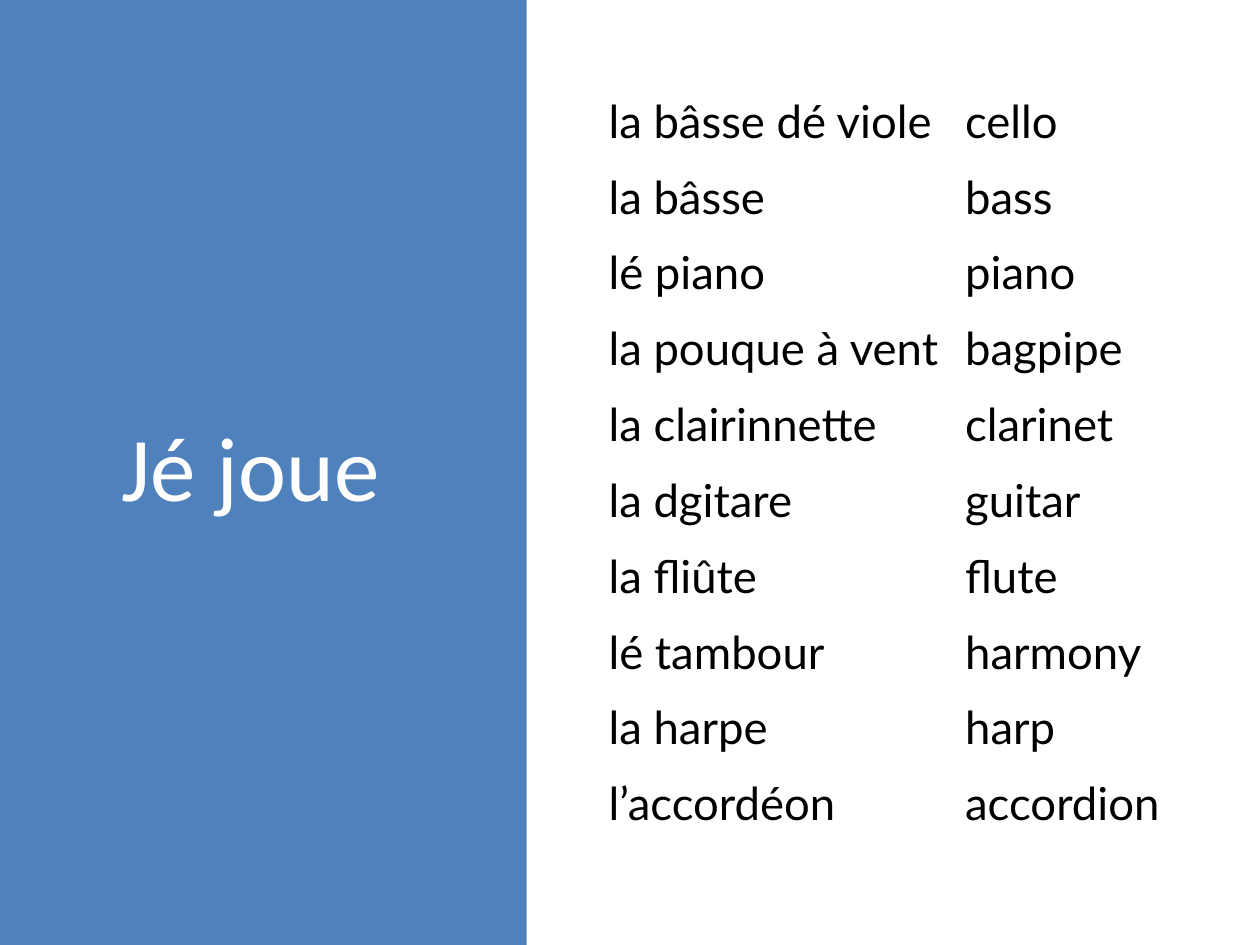
from pptx import Presentation
from pptx.dml.color import RGBColor
from pptx.enum.shapes import MSO_SHAPE
from pptx.enum.text import MSO_ANCHOR, PP_ALIGN
from pptx.util import Inches, Pt

RECTANGLE = MSO_SHAPE.RECTANGLE
MIDDLE, TOP = MSO_ANCHOR.MIDDLE, MSO_ANCHOR.TOP
CENTER = PP_ALIGN.CENTER

COLORS = {"panel": "4F81BD", "title": "FFFFFF", "text": "000000"}
TITLE_ONLY = 5
INSTRUMENTS = [
    ("la bâsse dé viole", "cello"),
    ("la bâsse", "bass"),
    ("lé piano", "piano"),
    ("la pouque à vent", "bagpipe"),
    ("la clairinnette", "clarinet"),
    ("la dgitare", "guitar"),
    ("la fliûte", "flute"),
    ("lé tambour", "harmony"),
    ("la harpe", "harp"),
    ("l’accordéon", "accordion"),
]


def color(name):
    return RGBColor.from_string(COLORS[name])


def format_font(para, name, size, color_name):
    para.font.name = name
    para.font.size = Pt(size)
    para.font.color.rgb = color(color_name)


def add_title_panel(page, left, top, width, height):
    panel = page.shapes.add_shape(
        RECTANGLE, Inches(left), Inches(top), Inches(width), Inches(height))
    panel.shadow.inherit = False
    panel.fill.solid()
    panel.fill.fore_color.rgb = color("panel")
    panel.line.fill.background()

    title = page.shapes.title
    title.element.addprevious(panel.element)
    title.left, title.top = Inches(left + 0.43), Inches(top + 0.68)
    title.width, title.height = Inches(3.12), Inches(6.02)
    title.text_frame.text = "Jé joue"
    title.text_frame.word_wrap = True
    title.text_frame.vertical_anchor = MIDDLE
    para = title.text_frame.paragraphs[0]
    para.alignment = CENTER
    format_font(para, "Calibri", 52, "title")


def add_vocabulary(page, left, top, width, height):
    table = page.shapes.add_table(
        len(INSTRUMENTS), 2, Inches(left), Inches(top),
        Inches(width), Inches(height)).table
    table.first_row = False
    table.horz_banding = False
    table.columns[0].width = Inches(2.83)
    table.columns[1].width = Inches(width - 2.83)
    for row, words in enumerate(INSTRUMENTS):
        for column, word in enumerate(words):
            cell = table.cell(row, column)
            cell.text = word
            cell.fill.background()
            cell.vertical_anchor = TOP
            cell.margin_left = cell.margin_right = Inches(0.06)
            cell.margin_top = cell.margin_bottom = Inches(0.06)
            format_font(cell.text_frame.paragraphs[0], "Lato", 26, "text")


def main():
    deck = Presentation()
    deck.slide_width, deck.slide_height = Inches(10), Inches(7.5)
    page = deck.slides.add_slide(deck.slide_layouts[TITLE_ONLY])
    add_title_panel(page, 0, 0, 4.18, 7.5)
    add_vocabulary(page, 4.77, 0.68, 4.58, 6.02)
    deck.save("out.pptx")


if __name__ == "__main__":
    main()
